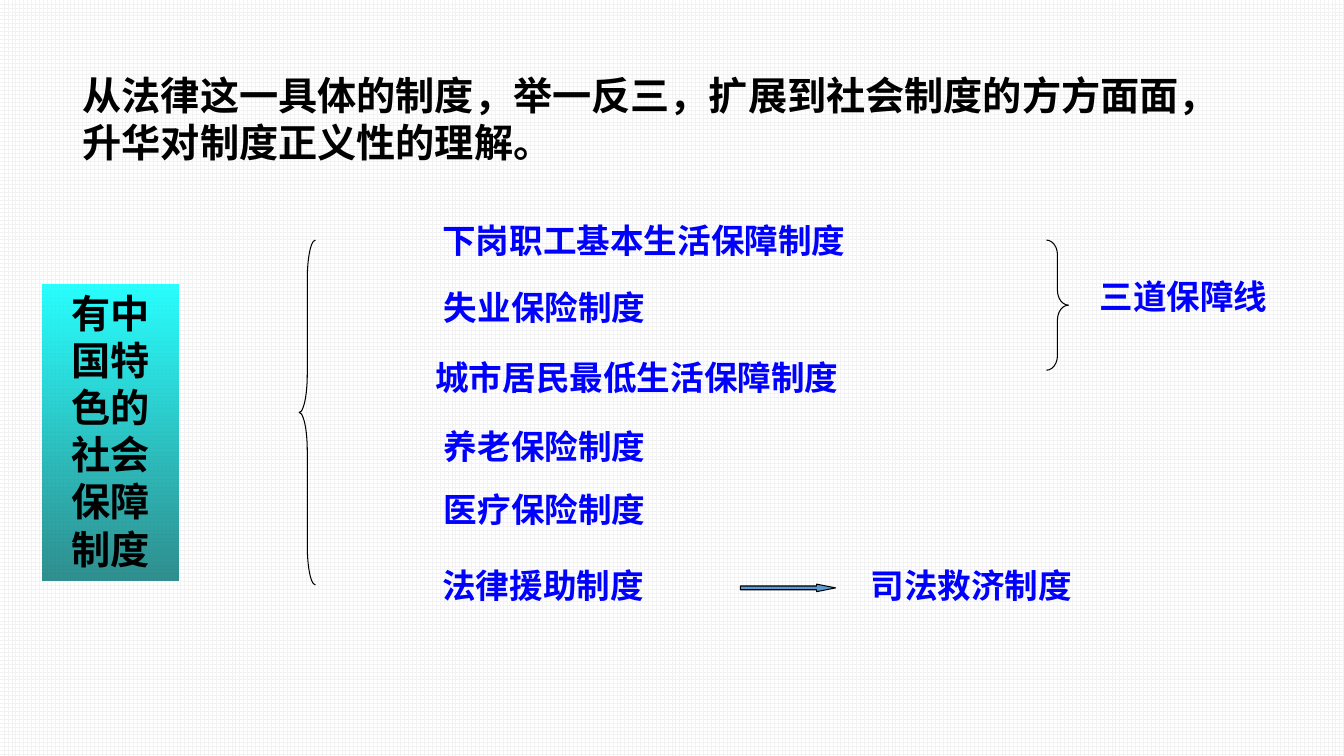
from lxml import etree
from pptx import Presentation
from pptx.dml.color import RGBColor
from pptx.enum.dml import MSO_PATTERN
from pptx.enum.shapes import MSO_SHAPE
from pptx.enum.text import MSO_ANCHOR, PP_ALIGN
from pptx.oxml.ns import qn
from pptx.util import Cm, Pt

BLACK = RGBColor(0, 0, 0)
WHITE = RGBColor(255, 255, 255)
GRID = RGBColor(0xF2, 0xF2, 0xF2)
BLUE = RGBColor(0, 0, 255)
CYAN = RGBColor(0, 255, 255)
TEAL = RGBColor(0, 0x76, 0x76)
STEEL = RGBColor(0x5B, 0x9B, 0xD5)
ARIAL = "Arial"
NOTO = "Noto Sans CJK SC"

# Left, top, height in cm, font, wording
LABELS = [
    (10.9, 5.41, 1.27, ARIAL, "下岗职工基本生活保障制度"),
    (10.94, 7.11, 2.31, NOTO, "失业保险制度"),
    (10.72, 8.86, 2.31, ARIAL, "城市居民最低生活保障制度"),
    (10.94, 10.62, 2.31, NOTO, "养老保险制度"),
    (10.94, 12.19, 1.27, ARIAL, "医疗保险制度"),
    (10.9, 14.1, 2.31, NOTO, "法律援助制度"),
    (21.69, 14.1, 2.31, ARIAL, "司法救济制度"),
    (27.46, 6.83, 2.31, ARIAL, "三道保障线"),
]


def write(shape, text, size, color, font=ARIAL, align=PP_ALIGN.LEFT, wrap=True):
    frame = shape.text_frame
    frame.text = text
    frame.word_wrap = wrap
    frame.vertical_anchor = MSO_ANCHOR.TOP
    para = frame.paragraphs[0]
    para.alignment = align
    run = para.runs[0]
    run.font.size = Pt(size)
    run.font.bold = True
    run.font.name = font
    run.font.color.rgb = color
    # East Asian typeface
    east = etree.SubElement(run.font._element, qn("a:ea"))
    east.set("typeface", font)


def add_title(slide, text):
    title = slide.shapes.title
    title.left, title.top = Cm(1.83), Cm(1.68)
    title.width, title.height = Cm(29.08), Cm(2.64)
    write(title, text, 28, BLACK)


def add_label(slide, left, top, height, font, text):
    width = 0.51 + len(text) * 24 * 2.54 / 72
    box = slide.shapes.add_textbox(Cm(left), Cm(top), Cm(width), Cm(height))
    write(box, text, 24, BLUE, font, wrap=False)


def add_form(slide, kind, left, top, width, height, adjust=()):
    form = slide.shapes.add_shape(kind, Cm(left), Cm(top), Cm(width), Cm(height))
    form.shadow.inherit = False
    form.fill.background()
    form.line.color.rgb = BLACK
    form.line.width = Pt(0.75)
    for index, value in enumerate(adjust):
        form.adjustments[index] = value
    return form


def add_topic(slide, text):
    box = add_form(slide, MSO_SHAPE.RECTANGLE, 1.06, 7.17, 3.45, 7.45)
    box.line.fill.background()
    box.fill.gradient()
    box.fill.gradient_angle = 270
    for stop, color, alpha in zip(box.fill.gradient_stops, (CYAN, TEAL), (84, 81)):
        stop.color.rgb = color
        tint = box._element.spPr.findall(".//" + qn("a:gs"))[color == TEAL][0]
        etree.SubElement(tint, qn("a:alpha")).set("val", str(alpha * 1000))
    write(box, text, 28, BLACK, align=PP_ALIGN.CENTER)


def main():
    deck = Presentation()
    deck.slide_width, deck.slide_height = Cm(33.87), Cm(19.05)
    slide = deck.slides.add_slide(deck.slide_layouts[5])

    # Grid background
    back = slide.background.fill
    back.patterned()
    back.pattern = MSO_PATTERN.LARGE_GRID
    back.fore_color.rgb = GRID
    back.back_color.rgb = WHITE

    # Heading and topic
    add_title(slide, "从法律这一具体的制度，举一反三，扩展到社会制度的方方面面，升华对制度正义性的理解。")
    add_topic(slide, "有中国特色的社会保障制度")

    # Systems and their groups
    for label in LABELS:
        add_label(slide, *label)
    add_form(slide, MSO_SHAPE.LEFT_BRACE, 7.54, 6.05, 0.41, 8.69, (2.41, 0.5))
    add_form(slide, MSO_SHAPE.RIGHT_BRACE, 26.37, 6.05, 0.56, 3.28, (0.66, 0.5))

    # Arrow to judicial relief
    arrow = add_form(slide, MSO_SHAPE.RIGHT_ARROW, 18.66, 14.72, 2.4, 0.19, (0.5, 2.52))
    arrow.fill.solid()
    arrow.fill.fore_color.rgb = STEEL

    deck.save("out.pptx")


if __name__ == "__main__":
    main()
